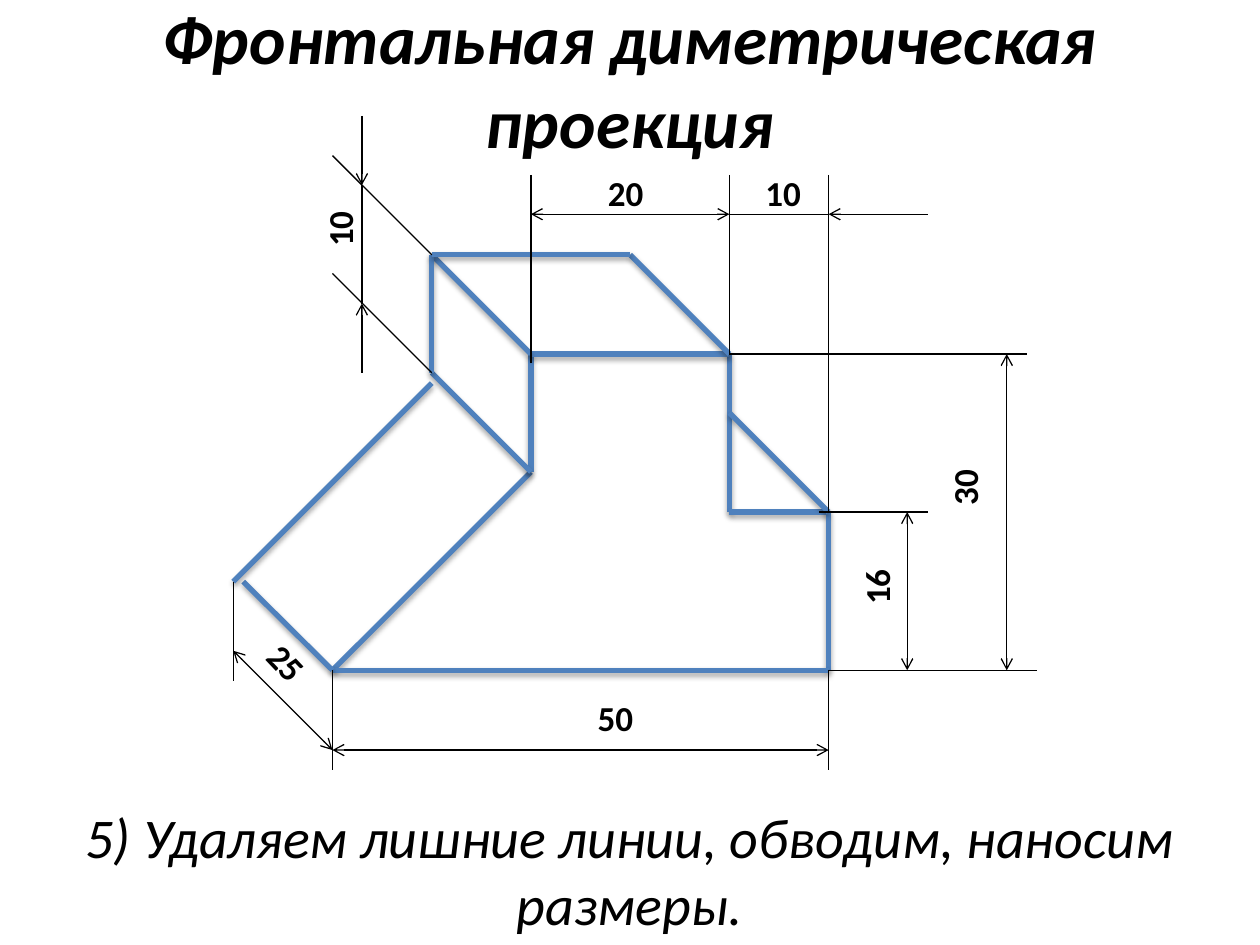
from dataclasses import dataclass

from lxml import etree
from pptx import Presentation
from pptx.dml.color import RGBColor
from pptx.enum.shapes import MSO_CONNECTOR
from pptx.enum.text import MSO_ANCHOR, MSO_AUTO_SIZE, PP_ALIGN
from pptx.oxml.ns import qn
from pptx.util import Pt

STRAIGHT = MSO_CONNECTOR.STRAIGHT
CENTER = PP_ALIGN.CENTER
MIDDLE = MSO_ANCHOR.MIDDLE
NO_FIT = MSO_AUTO_SIZE.NONE
GROW = MSO_AUTO_SIZE.SHAPE_TO_FIT_TEXT

BLACK = RGBColor(0x00, 0x00, 0x00)
BLUE = RGBColor(0x4F, 0x81, 0xBD)
FONT = "Calibri"

# Drawing grid, in points
STEP = 56.7  # ten millimetres of the part along x
FRONT_LEFT = 190
BACK_LEFT = FRONT_LEFT - STEP
TOP_BACK_LEFT = FRONT_LEFT + STEP
TOP_LEFT = FRONT_LEFT + 2 * STEP
TOP_BACK_RIGHT = FRONT_LEFT + 3 * STEP
TOP_RIGHT = FRONT_LEFT + 4 * STEP
FRONT_RIGHT = FRONT_LEFT + 5 * STEP
BASE = 383
LEDGE = 292.6
SHOULDER = 269.7
TOP = 202.3
BACK_TOP = TOP - STEP
BACK_SHOULDER = SHOULDER - STEP
BACK_BASE = 332.4

# Dimension lines
TOP_DIM = 122.4
TOP_EXTENSION = 100
BASE_DIM = 428.6
BASE_EXTENSION = 440
LEDGE_DIM = 518.4
HEIGHT_DIM = 575.3
DEPTH_DIM = 206.8
BACK_DIM = 105.8
RIGHT_TAIL = FRONT_RIGHT + STEP


@dataclass(frozen=True)
class Line:
    x1: float
    y1: float
    x2: float
    y2: float
    head: bool = False
    tail: bool = False


@dataclass(frozen=True)
class Label:
    text: str
    left: float
    top: float
    rotation: float = 0


EDGES = [
    # Front face
    Line(FRONT_LEFT, BASE, TOP_LEFT, SHOULDER),
    Line(TOP_LEFT, SHOULDER, TOP_LEFT, TOP),
    Line(TOP_RIGHT, LEDGE, TOP_RIGHT, TOP),
    Line(FRONT_RIGHT, LEDGE, TOP_RIGHT, LEDGE),
    Line(FRONT_RIGHT, BASE, FRONT_RIGHT, LEDGE),
    Line(TOP_LEFT, TOP, TOP_RIGHT, TOP),
    Line(FRONT_LEFT, BASE, FRONT_RIGHT, BASE),
    # Receding edges
    Line(FRONT_LEFT, BASE, 139, BACK_BASE),
    Line(TOP_LEFT, SHOULDER, TOP_BACK_LEFT, BACK_SHOULDER),
    Line(TOP_LEFT, TOP, TOP_BACK_LEFT, BACK_TOP),
    Line(TOP_RIGHT, TOP, TOP_BACK_RIGHT, BACK_TOP),
    Line(FRONT_RIGHT, LEDGE, TOP_RIGHT, LEDGE - STEP),
    # Back face
    Line(BACK_LEFT, BACK_BASE, TOP_BACK_LEFT, 219),
    Line(TOP_BACK_LEFT, BACK_SHOULDER, TOP_BACK_LEFT, BACK_TOP),
    Line(TOP_BACK_LEFT, BACK_TOP, TOP_BACK_RIGHT, BACK_TOP),
]

DIMENSIONS = [
    # Extension lines
    Line(BACK_LEFT, BACK_BASE, BACK_LEFT, 389),
    Line(TOP_LEFT, TOP_EXTENSION, TOP_LEFT, 207.4),
    Line(TOP_RIGHT, TOP_EXTENSION, TOP_RIGHT, TOP),
    Line(FRONT_RIGHT, TOP_EXTENSION, FRONT_RIGHT, LEDGE),
    Line(FRONT_LEFT, BASE, FRONT_LEFT, BASE_EXTENSION),
    Line(FRONT_RIGHT, BASE, FRONT_RIGHT, BASE_EXTENSION),
    Line(TOP_RIGHT, TOP, 586.8, TOP),
    Line(468, LEDGE, RIGHT_TAIL, LEDGE),
    Line(FRONT_RIGHT, BASE, 592.6, BASE),
    Line(FRONT_LEFT, BACK_SHOULDER - STEP, TOP_BACK_LEFT, BACK_SHOULDER),
    Line(FRONT_LEFT, BACK_TOP - STEP, TOP_BACK_LEFT, BACK_TOP),
    # Horizontal dimensions
    Line(FRONT_LEFT, BASE_DIM, FRONT_RIGHT, BASE_DIM, True, True),
    Line(TOP_LEFT, TOP_DIM, TOP_RIGHT, TOP_DIM, True, True),
    Line(TOP_RIGHT, TOP_DIM, FRONT_RIGHT, TOP_DIM),
    Line(FRONT_RIGHT, TOP_DIM, RIGHT_TAIL, TOP_DIM, head=True),
    # Vertical dimensions
    Line(LEDGE_DIM, LEDGE, LEDGE_DIM, BASE, True, True),
    Line(HEIGHT_DIM, TOP, HEIGHT_DIM, BASE, True, True),
    Line(DEPTH_DIM, 173.5, DEPTH_DIM, BACK_DIM),
    Line(DEPTH_DIM, 173.5, DEPTH_DIM, 213, head=True),
    Line(DEPTH_DIM, 66.2, DEPTH_DIM, BACK_DIM, tail=True),
    # Depth dimension
    Line(BACK_LEFT, BASE_DIM - STEP, FRONT_LEFT, BASE_DIM, True, True),
]

LABELS = [
    Label("20", 337.7, 94.3),
    Label("10", 427.7, 94.3),
    Label("50", 331.9, 394.6),
    Label("25", 144, 362.9, 46.7),
    Label("16", 481, 319.7, 270),
    Label("30", 531.4, 262.8, 270),
    Label("10", 174.2, 115.2, 270),
]


def add_line(slide, line: Line, color: RGBColor, width: float, shadow: bool = False) -> None:
    connector = slide.shapes.add_connector(
        STRAIGHT, Pt(line.x1), Pt(line.y1), Pt(line.x2), Pt(line.y2))
    connector.line.color.rgb = color
    connector.line.width = Pt(width)
    properties = connector.line._get_or_add_ln()
    for tag, present in (("a:headEnd", line.head), ("a:tailEnd", line.tail)):
        if present:
            etree.SubElement(properties, qn(tag), type="arrow")
    effects = etree.SubElement(connector._element.spPr, qn("a:effectLst"))
    if shadow:
        outer = etree.SubElement(
            effects, qn("a:outerShdw"), blurRad=str(Pt(3.1)), dist=str(Pt(1.8)),
            dir="5400000", rotWithShape="0")
        tint = etree.SubElement(outer, qn("a:srgbClr"), val=str(BLACK))
        etree.SubElement(tint, qn("a:alpha"), val="35000")


def write(box, text: str, size: float, bold: bool = False, italic: bool = False) -> None:
    box.text_frame.word_wrap = True
    para = box.text_frame.paragraphs[0]
    para.alignment = CENTER
    span = para.add_run()
    span.text = text
    span.font.name = FONT
    span.font.size = Pt(size)
    span.font.bold = bold
    span.font.italic = italic
    span.font.color.rgb = BLACK


def add_label(slide, label: Label) -> None:
    box = slide.shapes.add_textbox(Pt(label.left), Pt(label.top), Pt(39.6), Pt(31.5))
    box.rotation = label.rotation
    box.text_frame.auto_size = GROW
    write(box, label.text, 20, bold=True)


def main() -> None:
    deck = Presentation()
    deck.slide_width, deck.slide_height = Pt(720), Pt(540)
    slide = deck.slides.add_slide(deck.slide_layouts[5])

    # Title and caption
    title = slide.shapes.title
    title.left, title.top, title.width, title.height = Pt(0), Pt(0), Pt(720), Pt(90)
    title.text_frame.vertical_anchor = MIDDLE
    title.text_frame.auto_size = NO_FIT
    write(title, "Фронтальная диметрическая проекция", 39.6, bold=True, italic=True)
    caption = slide.shapes.add_textbox(Pt(0), Pt(455), Pt(720), Pt(85))
    caption.text_frame.auto_size = GROW
    write(caption, "5) Удаляем лишние линии, обводим, наносим размеры.", 32, italic=True)

    # Part outline, dimension lines and their values
    for edge in EDGES:
        add_line(slide, edge, BLUE, 3, shadow=True)
    for dimension in DIMENSIONS:
        add_line(slide, dimension, BLACK, 0.75)
    for label in LABELS:
        add_label(slide, label)

    deck.save("out.pptx")


if __name__ == "__main__":
    main()
